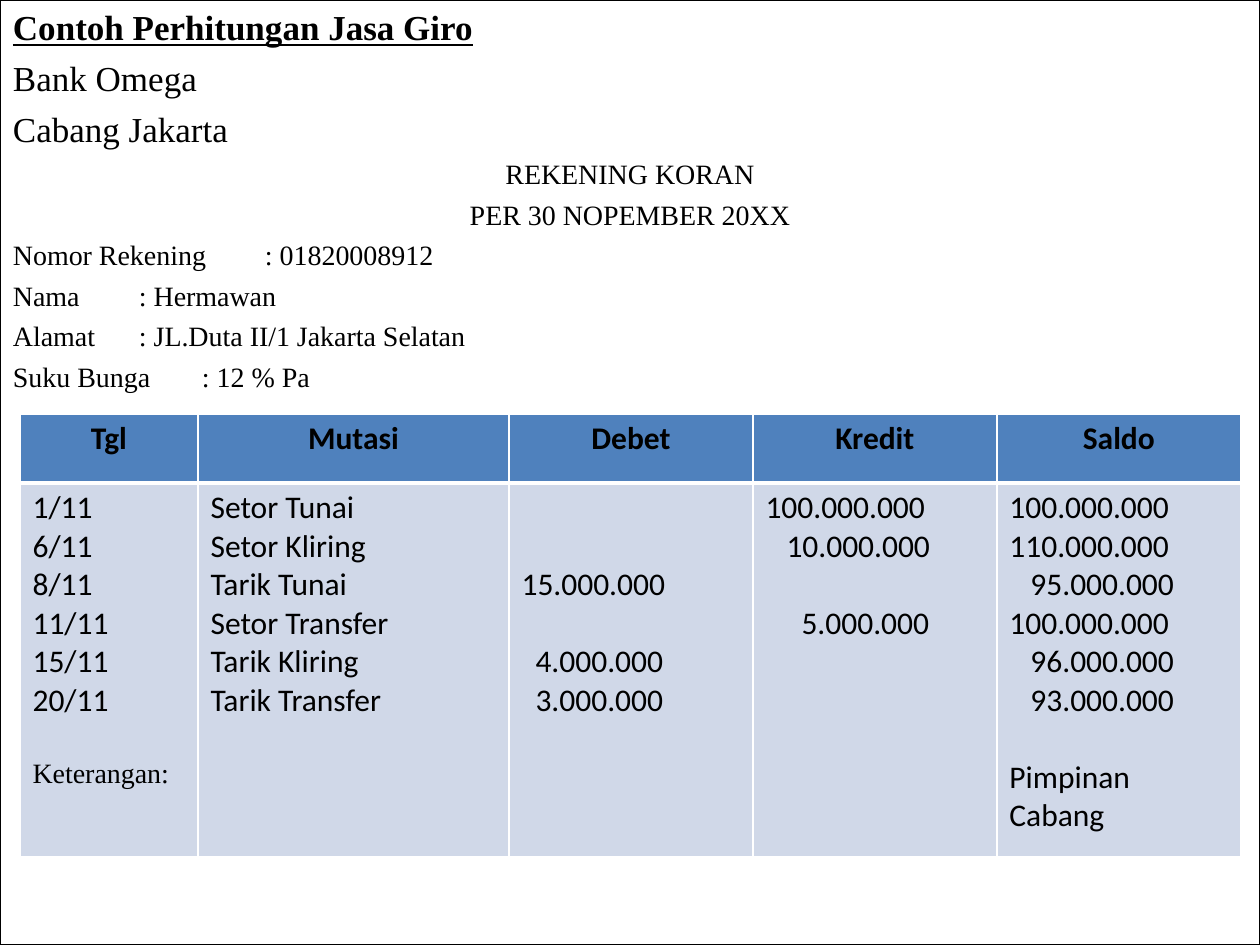
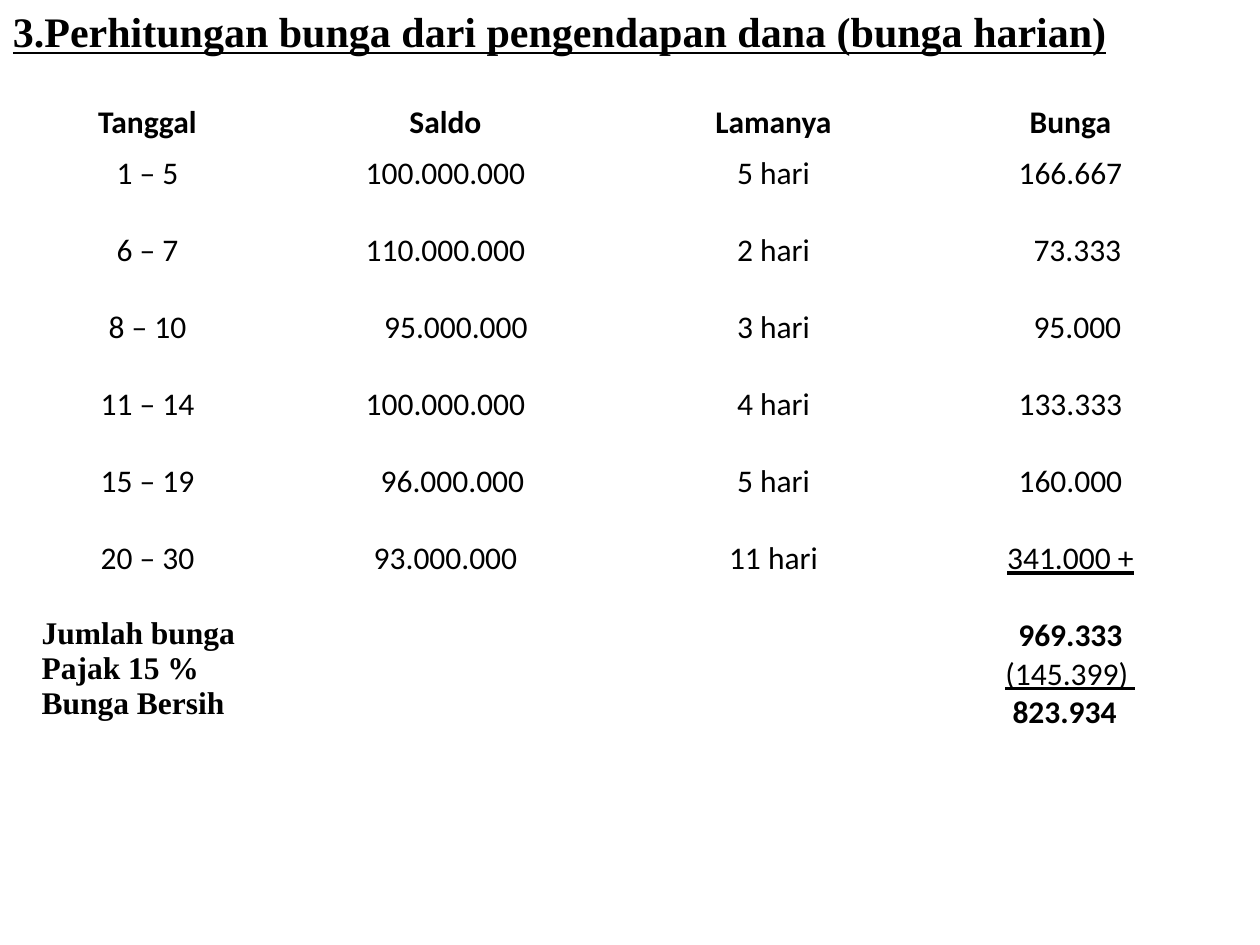
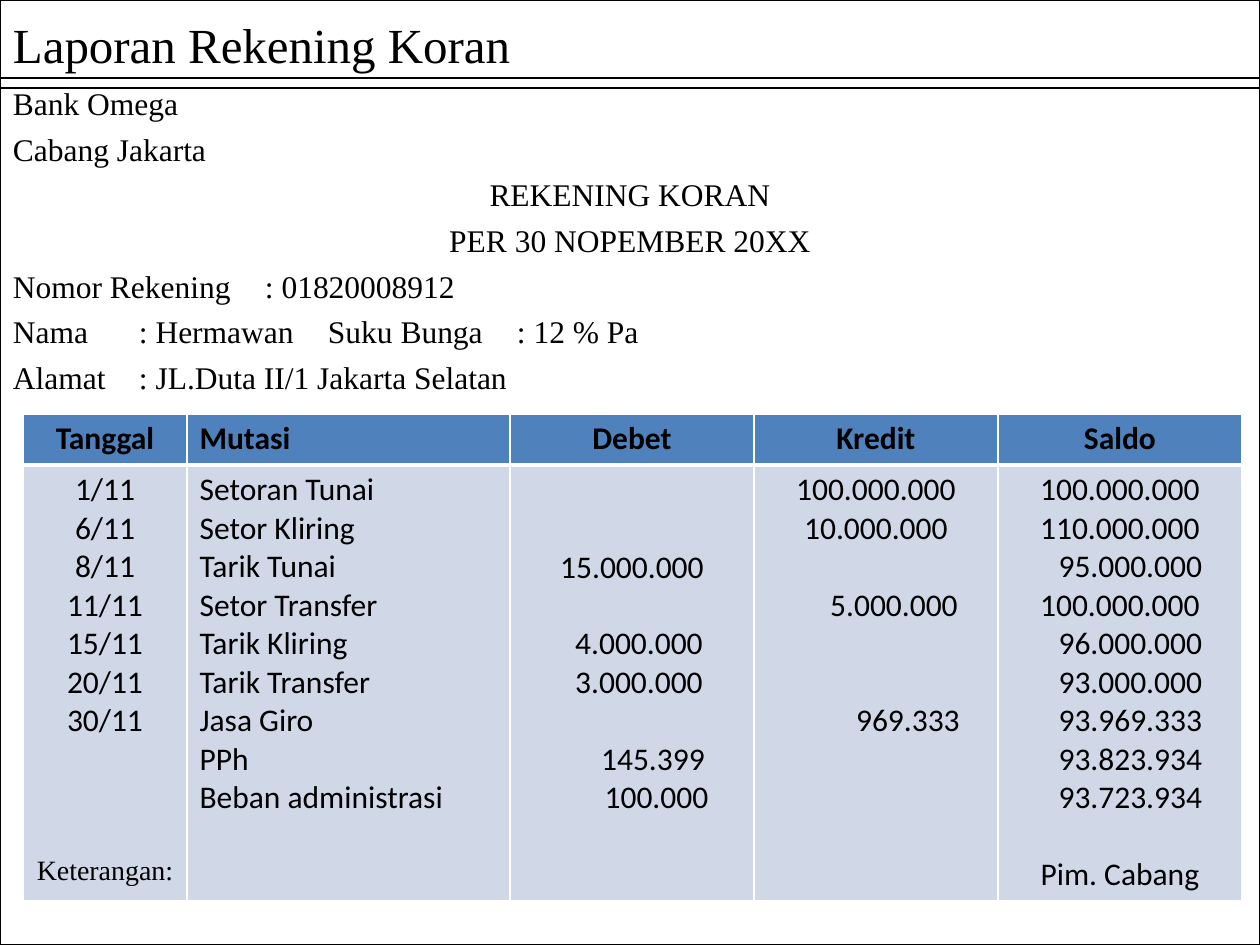
from collections import namedtuple

from lxml import etree
from pptx import Presentation
from pptx import util as u
from pptx.dml.color import RGBColor
from pptx.enum import shapes, text
from pptx.oxml.ns import qn

WIDTH, HEIGHT, PX_PER_INCH = 1260, 945, 126
BLACK, WHITE, HEAD_BLUE, PALE_BLUE = "000000", "FFFFFF", "4F81BD", "D0D8E8"
SERIF, SANS = "Times New Roman", "Calibri"
LINE_PT = 22
LEFT, CENTER = text.PP_ALIGN.LEFT, text.PP_ALIGN.CENTER
MARGIN_X, MARGIN_Y = 13, 6

Line = namedtuple("Line", "words indent align look tabs", defaults=(0, None, {}, ()))
Column = namedtuple("Column", "head lines align width head_align", defaults=(CENTER,))

NOTE = Line("Keterangan:", look={"size": 16, "name": SERIF})
BANK = ["Bank Omega", "Cabang Jakarta"]
PERIOD = [Line(words, align=CENTER) for words in ("REKENING KORAN", "PER 30 NOPEMBER 20XX")]
NUMBER, NAME, ADDRESS = [
    Line(words, tabs=(300, 784, 1055))
    for words in (
        "Nomor Rekening\t: 01820008912",
        "Nama\t: Hermawan",
        "Alamat\t: JL.Duta II/1 Jakarta Selatan",
    )
]
DATES = ["1/11", "6/11", "8/11", "11/11", "15/11", "20/11"]
MOVES = ["Setor Kliring", "Tarik Tunai", "Setor Transfer", "Tarik Kliring", "Tarik Transfer"]
DEBITS = [None, None, "15.000.000", None, Line("4.000.000", 14), Line("3.000.000", 14)]
LATE_CREDIT = Line("5.000.000", 36)
BALANCES = [
    "100.000.000", "110.000.000", Line("95.000.000", 21),
    "100.000.000", Line("96.000.000", 21), Line("93.000.000", 21),
]


def px(length):
    """Turn px into EMU."""
    return u.Emu(round(length * 914400 / PX_PER_INCH))


def color(value):
    """Turn a hex string into a colour."""
    return RGBColor.from_string(value)


def write_line(paragraph, line, align, look):
    """Write one line of text with its alignment, indent, tabs and font."""
    paragraph.alignment = line.align or align
    properties = paragraph._p.get_or_add_pPr()
    properties.set("marL", str(px(line.indent)))
    properties.set("indent", "0")
    if line.tabs:
        stops = etree.SubElement(properties, qn("a:tabLst"))
        for stop in line.tabs:
            etree.SubElement(stops, qn("a:tab"), pos=str(px(stop)), algn="l")
    run = paragraph.add_run()
    run.text = line.words
    run.font.color.rgb = color(BLACK)
    for key, value in {**look, **line.look}.items():
        setattr(run.font, key, u.Pt(value) if key == "size" else value)


def write_lines(frame, lines, align, look, spacing=0):
    """Write the lines, turning each gap into spacing, and return the gaps on top."""
    gaps, top_gaps, paragraph = 0, 0, None
    for entry in lines:
        if entry is None:
            gaps += 1
            continue
        line = entry if isinstance(entry, Line) else Line(entry)
        if paragraph is None:
            paragraph, top_gaps = frame.paragraphs[0], gaps
        else:
            paragraph = frame.add_paragraph()
            size = line.look.get("size", look["size"])
            paragraph.space_before = u.Pt(gaps * LINE_PT + spacing * size)
        write_line(paragraph, line, align, look)
        gaps = 0
    return top_gaps


def add_panel(slide, box, lines, size, outlined=True, anchor=text.MSO_ANCHOR.TOP):
    """Add a page panel with serif lines."""
    panel = slide.shapes.add_shape(shapes.MSO_SHAPE.RECTANGLE, *map(px, box))
    panel.shadow.inherit = False
    panel.fill.background()
    if outlined:
        panel.line.color.rgb = color(BLACK)
        panel.line.width = u.Pt(1)
    else:
        panel.line.fill.background()
    frame = panel.text_frame
    frame_format = {
        "word_wrap": True, "vertical_anchor": anchor,
        "margin_left": px(MARGIN_X), "margin_right": px(MARGIN_X),
        "margin_top": px(MARGIN_Y), "margin_bottom": px(MARGIN_Y),
    }
    for key, value in frame_format.items():
        setattr(frame, key, value)
    write_lines(frame, lines, LEFT, {"size": size, "name": SERIF}, spacing=0.25)


def style_cell(cell, fill, widths):
    """Set the fill and the white borders of a cell."""
    if fill:
        cell.fill.solid()
        cell.fill.fore_color.rgb = color(fill)
    else:
        cell.fill.background()
    properties = cell._tc.get_or_add_tcPr()
    for index, (side, width) in enumerate(widths.items()):
        border = etree.Element(qn(f"a:{side}"), w=str(u.Pt(width)))
        solid = etree.SubElement(border, qn("a:solidFill"))
        etree.SubElement(solid, qn("a:srgbClr"), val=WHITE)
        properties.insert(index, border)


def add_ledger(slide, left, top, heights, columns, fills=(HEAD_BLUE, PALE_BLUE)):
    """Add a table of one header row and one row of stacked entries."""
    total = sum(column.width for column in columns)
    box = map(px, (left, top, total, sum(heights)))
    ledger = slide.shapes.add_table(2, len(columns), *box).table
    ledger.horz_banding = ledger.first_row = False
    for row, height in zip(ledger.rows, heights):
        row.height = px(height)
    for index, column in enumerate(columns):
        ledger.columns[index].width = px(column.width)
        parts = (([column.head], column.head_align), (column.lines, column.align))
        for row, (lines, align) in enumerate(parts):
            cell = ledger.cell(row, index)
            look = {"size": 18, "name": SANS, "bold": row == 0}
            gaps = write_lines(cell.text_frame, lines, align, look)
            cell.margin_top = px(MARGIN_Y) + u.Pt(gaps * LINE_PT)
            widths = {"lnL": 1, "lnR": 1, "lnT": 3 if row else 1, "lnB": 1 if row else 3}
            style_cell(cell, fills[row], widths)


def spread(entries):
    """Put a gap between neighbouring entries."""
    return [item for entry in entries for item in (entry, None)][:-1]


def build_example(slide):
    """Build the account statement example."""
    title = Line("Contoh Perhitungan Jasa Giro", look={"bold": True, "underline": True})
    small = [*PERIOD, NUMBER, NAME, ADDRESS, Line("Suku Bunga\t: 12 % Pa", tabs=(174,))]
    lines = [title, *BANK, *(line._replace(look={"size": 16}) for line in small)]
    add_panel(slide, (0, 0, WIDTH, HEIGHT), lines, 20)
    credits = ["100.000.000", Line("10.000.000", 21), None, LATE_CREDIT]
    add_ledger(slide, 20, 414, (69, 374), [
        Column("Tgl", [*DATES, None, NOTE], LEFT, 178),
        Column("Mutasi", ["Setor Tunai", *MOVES], LEFT, 311),
        Column("Debet", DEBITS, LEFT, 244),
        Column("Kredit", credits, LEFT, 244),
        Column("Saldo", [*BALANCES, None, "Pimpinan Cabang"], LEFT, 244),
    ])


def build_interest(slide):
    """Build the daily interest calculation."""
    bold, underlined = {"bold": True}, {"underline": True}
    title = Line("3.Perhitungan bunga dari pengendapan dana (bunga harian)",
                 look={**bold, **underlined})
    add_panel(slide, (0, 0, WIDTH, HEIGHT), [title], 24, outlined=False)
    days = ["1 – 5", "6 – 7", "8 – 10", "11 – 14", "15 – 19", "20 – 30"]
    totals = [
        Line(words, align=LEFT, look={"name": SERIF, **bold})
        for words in ("Jumlah bunga", "Pajak 15 %", "Bunga Bersih")
    ]
    balances = [
        "100.000.000", "110.000.000", Line("95.000.000", 21),
        "100.000.000", Line("96.000.000", 14), "93.000.000",
    ]
    interest = [
        "166.667", Line("73.333", 14), Line("95.000", 14),
        "133.333", "160.000", Line("341.000 +", look=underlined),
    ]
    results = [
        Line("969.333", look=bold),
        Line("(145.399) ", look=underlined),
        Line("823.934", 78, LEFT, bold),
    ]
    lengths = [f"{count} hari" for count in (5, 2, 3, 4, 5, 11)]
    add_ledger(slide, 29, 98, (51, 617), [
        Column("Tanggal", [*spread(days), None, *totals], CENTER, 237),
        Column("Saldo", spread(balances), CENTER, 359),
        Column("Lamanya", spread(lengths), CENTER, 297),
        Column("Bunga", [*spread(interest), None, *results], CENTER, 297),
    ], fills=(None, None))


def build_report(slide):
    """Build the final account statement report."""
    add_panel(slide, (0, 0, WIDTH, 88), ["Laporan Rekening Koran"], 28,
              anchor=text.MSO_ANCHOR.MIDDLE)
    holder = NAME._replace(words=NAME.words + "\tSuku Bunga\t: 12 % Pa")
    lines = [*BANK, *PERIOD, NUMBER, holder, ADDRESS]
    add_panel(slide, (0, 78, WIDTH, HEIGHT - 78), lines, 18)
    moves = ["Setoran Tunai", *MOVES, "Jasa Giro", "PPh", "Beban administrasi"]
    debits = [*DEBITS, None, Line("145.399", 42), Line("100.000", 49)]
    credits = ["100.000.000", "10.000.000", None, LATE_CREDIT, None, None, Line("969.333", 64)]
    closing = [Line(words, 21) for words in ("93.969.333", "93.823.934", "93.723.934")]
    add_ledger(slide, 23, 414, (51, 433), [
        Column("Tanggal", [*DATES, "30/11", None, None, None, NOTE], CENTER, 164),
        Column("Mutasi", moves, LEFT, 323, LEFT),
        Column("Debet", debits, CENTER, 244),
        Column("Kredit", credits, CENTER, 244),
        Column("Saldo", [*BALANCES, *closing, None, "Pim. Cabang"], CENTER, 244),
    ])


def main():
    """Build and save the presentation."""
    deck = Presentation()
    deck.slide_width, deck.slide_height = px(WIDTH), px(HEIGHT)
    for build in (build_example, build_interest, build_report):
        build(deck.slides.add_slide(deck.slide_layouts[6]))
    deck.save("out.pptx")


if __name__ == "__main__":
    main()
